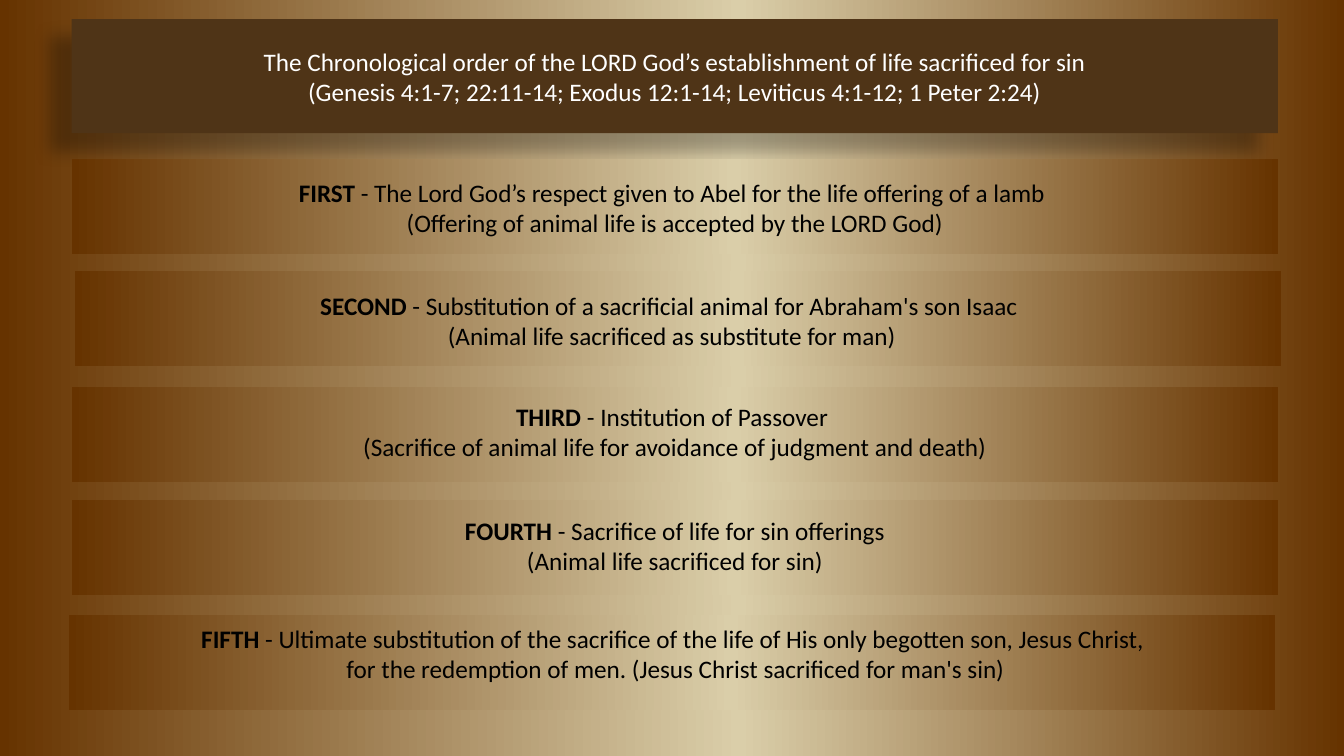
"""Build a slide of five gradient bars under a shadowed heading."""
from copy import deepcopy
from dataclasses import dataclass

from lxml import etree
from pptx import Presentation
from pptx import util as u
from pptx.dml import color, fill as dml
from pptx.enum import shapes, text
from pptx.oxml import ns
from pptx.shapes.autoshape import Shape
from pptx.slide import Slide

HUES = {"edge": "663300", "glow": "DACEA9", "head": "4F3417",
        "light": "FFFFFF", "ink": "000000"}
STOPS = [(0, "edge"), (0.45, "glow"), (1, "edge")]
LEFT, WIDE = 51.1, 861.8
BAR, NOTE = 67.7, 51.1


@dataclass
class Step:
    rank: str
    claim: str
    gloss: str
    bar: tuple[float, float]
    note: tuple[float, float, float]


STEPS = [
    Step("FIRST", " - The Lord God’s respect given to Abel for the life offering of a lamb ",
         "(Offering of animal life is accepted by the LORD God)",
         (LEFT, 113.8), (52.6, 123.1, 859)),
    Step("SECOND", " - Substitution of a sacrificial animal for Abraham's son Isaac ",
         "(Animal life sacrificed as substitute for man)",
         (53.3, 193.7), (49, 203.8, WIDE)),
    Step("THIRD", " - Institution of Passover ",
         "(Sacrifice of animal life for avoidance of judgment and death)",
         (LEFT, 276.5), (49.7, 283, 864.7)),
    Step("FOURTH", " - Sacrifice of life for sin offerings",
         "(Animal life sacrificed for sin)",
         (LEFT, 357.1), (53.3, 364.3, 857.5)),
    Step("FIFTH", " - Ultimate substitution of the sacrifice of the life of His only "
         "begotten son, Jesus Christ,",
         " for the redemption of men. (Jesus Christ sacrificed for man's sin)",
         (49, 439.2), (49.7, 441.4, WIDE)),
]
HEAD = ["The Chronological order of the LORD God’s establishment of life sacrificed for sin",
        "(Genesis 4:1-7; 22:11-14; Exodus 12:1-14; Leviticus 4:1-12; 1 Peter 2:24)"]


def rgb(hue: str) -> color.RGBColor:
    return color.RGBColor.from_string(HUES[hue])


def shade(fill: dml.FillFormat, root: etree._Element) -> None:
    fill.gradient()
    fill.gradient_angle = 180
    rows = root.find(".//" + ns.qn("a:gsLst"))
    rows.append(deepcopy(rows[-1]))
    for stop, (pos, hue) in zip(fill.gradient_stops, STOPS):
        stop.position = pos
        stop.color.rgb = rgb(hue)


def block(slide: Slide, left: float, top: float, high: float) -> Shape:
    rect = slide.shapes.add_shape(shapes.MSO_SHAPE.RECTANGLE, u.Pt(left), u.Pt(top),
                                  u.Pt(WIDE), u.Pt(high))
    rect.shadow.inherit = False
    rect.line.fill.background()
    return rect


def write(shape: Shape, lines: list[list[tuple[str, bool]]], hue: str) -> None:
    frame = shape.text_frame
    frame.word_wrap = True
    for num, line in enumerate(lines):
        para = frame.add_paragraph() if num else frame.paragraphs[0]
        para.alignment = text.PP_ALIGN.CENTER
        for words, bold in line:
            run = para.add_run()
            run.text = words
            run.font.name = "Calibri"
            run.font.size = u.Pt(18)
            run.font.bold = bold
            run.font.color.rgb = rgb(hue)


def cast(shape: Shape) -> None:
    glow = shape._element.spPr.find(ns.qn("a:effectLst"))
    drop = etree.SubElement(glow, ns.qn("a:outerShdw"), blurRad=str(u.Pt(11.8)),
                            dist=str(u.Pt(19.7)), dir=str(141 * 60000),
                            algn="ctr", rotWithShape="0")
    tint = etree.SubElement(drop, ns.qn("a:srgbClr"), val=HUES["ink"])
    etree.SubElement(tint, ns.qn("a:alpha"), val="28000")


def main() -> None:
    deck = Presentation()
    deck.slide_width, deck.slide_height = u.Pt(960), u.Pt(540)
    slide = deck.slides.add_slide(deck.slide_layouts[6])
    shade(slide.background.fill, slide._element)

    head = block(slide, LEFT, 13.7, 81.4)
    head.fill.solid()
    head.fill.fore_color.rgb = rgb("head")
    head.text_frame.vertical_anchor = text.MSO_ANCHOR.MIDDLE
    cast(head)
    write(head, [[(line, False)] for line in HEAD], "light")

    for step in STEPS:
        bar = block(slide, *step.bar, BAR)
        shade(bar.fill, bar._element)
    for step in STEPS:
        left, top, wide = step.note
        note = slide.shapes.add_textbox(u.Pt(left), u.Pt(top), u.Pt(wide), u.Pt(NOTE))
        note.text_frame.auto_size = text.MSO_AUTO_SIZE.SHAPE_TO_FIT_TEXT
        write(note, [[(step.rank, True), (step.claim, False)], [(step.gloss, False)]], "ink")

    deck.save("out.pptx")


if __name__ == "__main__":
    main()
